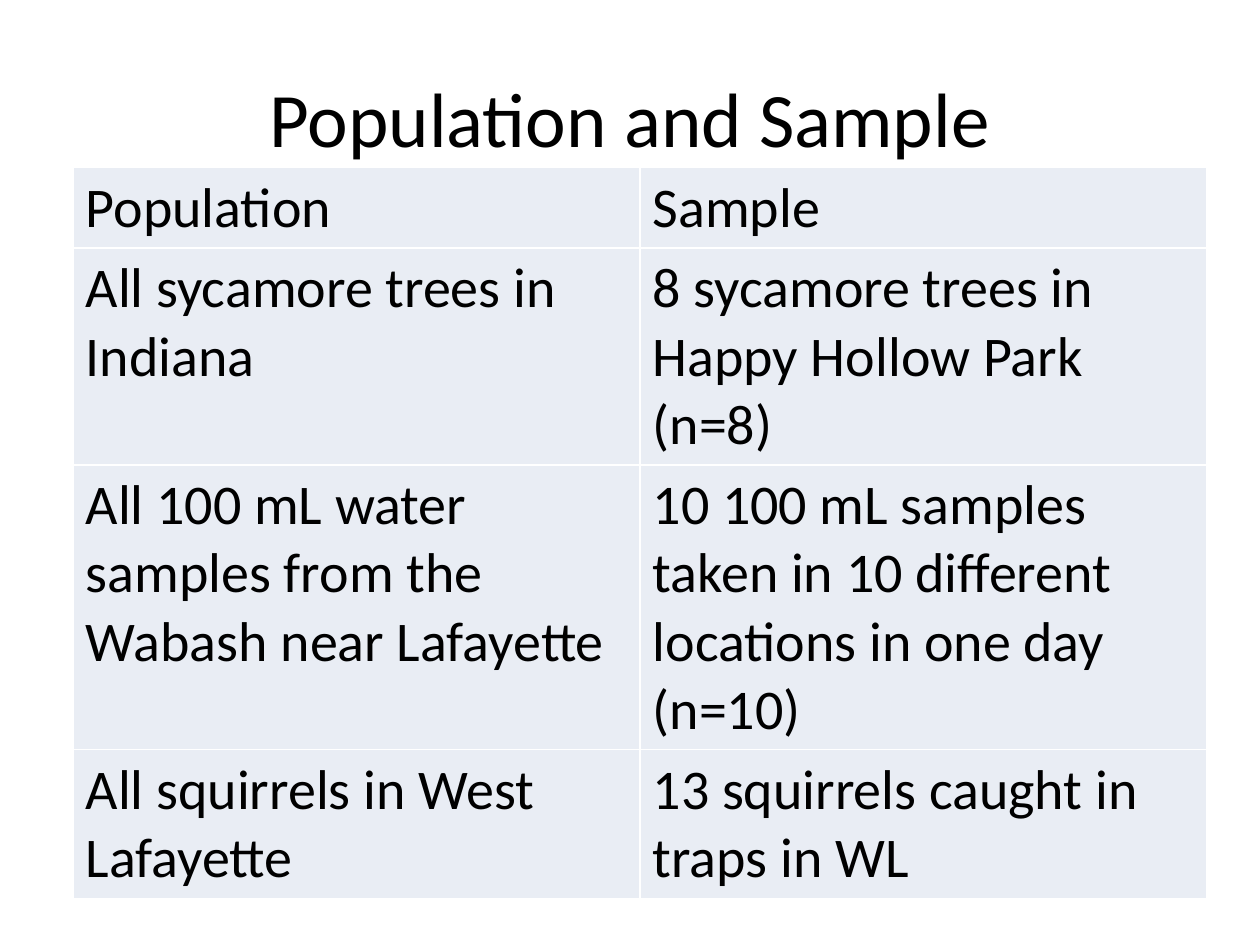
from dataclasses import dataclass

from pptx import Presentation
from pptx.dml.color import RGBColor
from pptx.enum.text import MSO_ANCHOR, PP_ALIGN
from pptx.slide import Slide
from pptx.text.text import TextFrame
from pptx.util import Inches, Pt

MIDDLE = MSO_ANCHOR.MIDDLE
CENTER = PP_ALIGN.CENTER
LEFT = PP_ALIGN.LEFT
BLANK = 6


@dataclass(frozen=True)
class Theme:
    font: str = "Calibri"
    title: int = 44
    body: int = 32
    ink: RGBColor = RGBColor(0, 0, 0)
    cell: RGBColor = RGBColor(0xE9, 0xED, 0xF4)


@dataclass(frozen=True)
class Row:
    group: str
    sample: str
    lines: int


THEME = Theme()
ROWS = [
    Row("Population", "Sample", 1),
    Row("All sycamore trees in Indiana",
        "8 sycamore trees in Happy Hollow Park (n=8)", 3),
    Row("All 100 mL water samples from the Wabash near Lafayette",
        "10 100 mL samples taken in 10 different locations in one day (n=10)", 4),
    Row("All squirrels in West Lafayette",
        "13 squirrels caught in traps in WL", 2),
]
PAD = 0.1
LINE = 0.54


def write(frame: TextFrame, text: str, size: int, align: PP_ALIGN) -> None:
    frame.word_wrap = True
    frame.text = text
    para = frame.paragraphs[0]
    para.alignment = align
    para.font.name = THEME.font
    para.font.size = Pt(size)
    para.font.color.rgb = THEME.ink


def add_title(slide: Slide, text: str) -> None:
    box = slide.shapes.add_textbox(Inches(0.5), Inches(0.3), Inches(9), Inches(1.25))
    box.text_frame.vertical_anchor = MIDDLE
    write(box.text_frame, text, THEME.title, CENTER)


def add_grid(slide: Slide, rows: list[Row]) -> None:
    tall = sum(PAD + LINE * row.lines for row in rows)
    table = slide.shapes.add_table(
        len(rows), 2, Inches(0.58), Inches(1.33), Inches(9), Inches(tall)).table
    table.first_row = False
    table.horz_banding = False
    for line, row in zip(table.rows, rows):
        line.height = Inches(PAD + LINE * row.lines)
        for cell, text in zip(line.cells, (row.group, row.sample)):
            cell.fill.solid()
            cell.fill.fore_color.rgb = THEME.cell
            write(cell.text_frame, text, THEME.body, LEFT)


def main() -> None:
    deck = Presentation()
    deck.slide_width = Inches(10)
    deck.slide_height = Inches(7.5)
    slide = deck.slides.add_slide(deck.slide_layouts[BLANK])
    add_title(slide, "Population and Sample")
    add_grid(slide, ROWS)
    deck.save("out.pptx")


if __name__ == "__main__":
    main()
